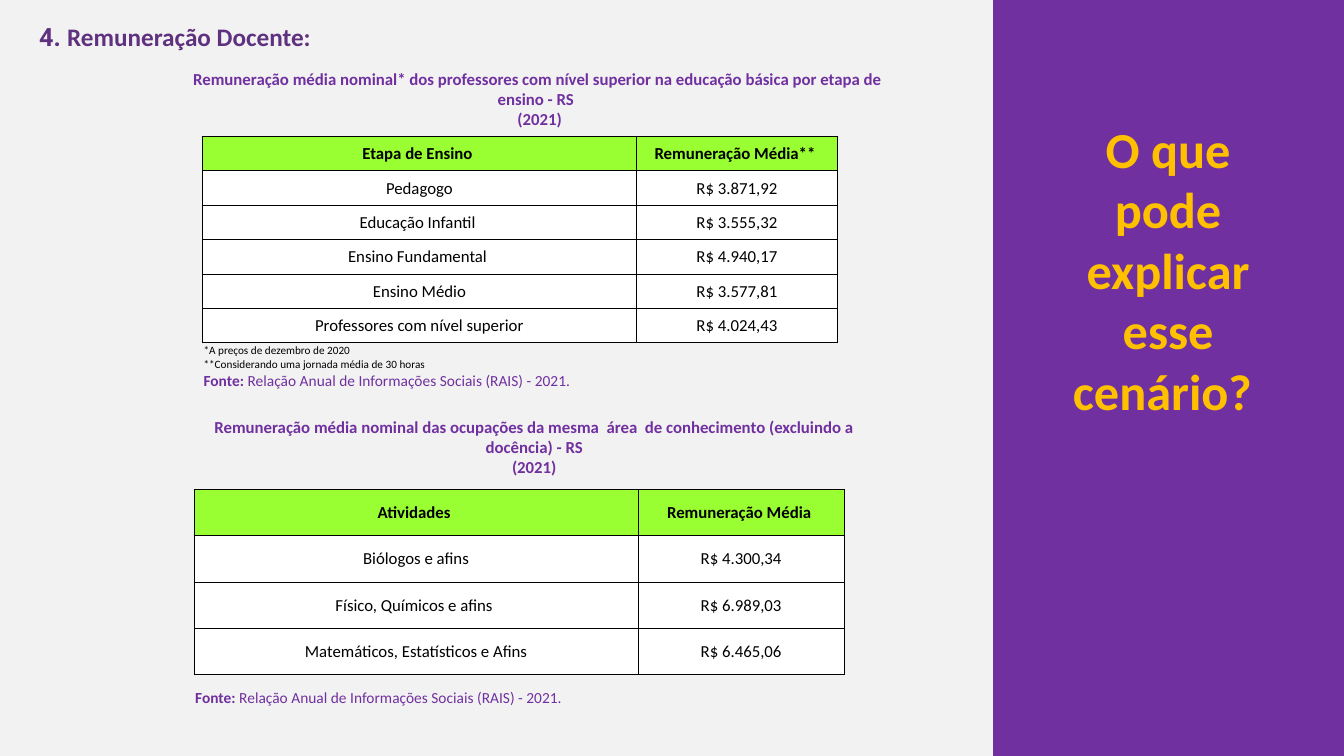
from lxml.etree import SubElement
from pptx import Presentation
from pptx.dml.color import RGBColor
from pptx.enum.shapes import MSO_SHAPE
from pptx.enum.text import MSO_ANCHOR, PP_ALIGN
from pptx.oxml.ns import qn
from pptx.util import Pt

PURPLE, BLACK, WHITE, GREEN = "7030A0", "000000", "FFFFFF", "99FF33"
TITLE_PURPLE, GOLD, PALE_GREY = "5F317F", "FFC000", "F2F2F2"
CENTER, LEFT = PP_ALIGN.CENTER, PP_ALIGN.LEFT

SOURCE = [("Fonte: ", 11, PURPLE, True),
          ("Relação Anual de Informações Sociais (RAIS) - 2021.", 11, PURPLE, False)]

TEXTS = [
    {"box": (20.9, 11.5, 479.5, 51), "align": LEFT, "paragraphs": [
        [("4. ", 18, TITLE_PURPLE, True, "Roboto"),
         ("Remuneração Docente: ", 18, TITLE_PURPLE, True)]]},
    {"box": (743, 80.6, 182.9, 225.4), "align": CENTER, "paragraphs": [
        [("O que pode explicar esse cenário? ", 36, GOLD, True)]]},
    {"box": (119.5, 45.4, 529.2, 51), "align": CENTER, "paragraphs": [
        [("Remuneração média nominal* dos professores com nível superior "
          "na educação básica por etapa de ensino - RS ", 12, PURPLE, True)],
        [(" (2021)", 12, PURPLE, True)]]},
    {"box": (139, 293.8, 485.3, 51), "align": CENTER, "paragraphs": [
        [("Remuneração média nominal das ocupações da mesma  área  de "
          "conhecimento (excluindo a docência) - RS", 12, PURPLE, True)],
        [(" (2021) ", 12, PURPLE, True)]]},
]

TABLES = [
    {"corner": (144.7, 97.3), "columns": (309.8, 143.8), "row": 24.6, "footer_row": 33.2,
     "rows": [("Etapa de Ensino ", "Remuneração Média** "),
              ("Pedagogo", "R$ 3.871,92"),
              ("Educação Infantil ", "R$ 3.555,32"),
              ("Ensino Fundamental ", "R$ 4.940,17"),
              ("Ensino Médio", "R$ 3.577,81"),
              ("Professores com nível superior", "R$ 4.024,43")],
     "footer": [[("*A preços de dezembro de 2020", 8, BLACK, False)],
                [("**Considerando uma jornada média de 30 horas", 8, BLACK, False)],
                SOURCE]},
    {"corner": (138.7, 349.6), "columns": (317, 147.4), "row": 33, "footer_row": 33,
     "rows": [("Atividades ", "Remuneração Média "),
              ("Biólogos e afins", "R$ 4.300,34"),
              ("Físico, Químicos e afins ", "R$ 6.989,03"),
              ("Matemáticos, Estatísticos e Afins", "R$ 6.465,06")],
     "footer": [SOURCE]},
]


def color(value):
    return RGBColor.from_string(value)


def write(frame, paragraphs, align):
    for index, runs in enumerate(paragraphs):
        paragraph = frame.paragraphs[0] if index == 0 else frame.add_paragraph()
        paragraph.alignment = align
        for text, size, ink, bold, *face in runs:
            run = paragraph.add_run()
            run.text = text
            run.font.size = Pt(size)
            run.font.bold = bold
            run.font.name = face[0] if face else "Calibri"
            run.font.color.rgb = color(ink)


def set_borders(cell, visible):
    properties = cell._tc.get_or_add_tcPr()
    for side in "LRTB":
        line = SubElement(properties, qn(f"a:ln{side}"), w=str(Pt(0.5)))
        if side in visible:
            fill = SubElement(line, qn("a:solidFill"))
            SubElement(fill, qn("a:srgbClr"), val=BLACK)
        else:
            SubElement(line, qn("a:noFill"))


def set_cell(cell, borders, fill):
    set_borders(cell, borders)
    cell.vertical_anchor = MSO_ANCHOR.MIDDLE
    cell.margin_left = cell.margin_right = cell.margin_top = Pt(0.7)
    cell.margin_bottom = Pt(0)
    if fill:
        cell.fill.solid()
        cell.fill.fore_color.rgb = color(fill)
    else:
        cell.fill.background()


def add_pay_table(slide, content):
    rows, columns = content["rows"], content["columns"]
    heights = [content["row"]] * len(rows) + [content["footer_row"]]
    left, top = content["corner"]
    table = slide.shapes.add_table(len(heights), len(columns), Pt(left), Pt(top),
                                   Pt(sum(columns)), Pt(sum(heights))).table
    table.first_row = table.horz_banding = False
    for column, width in zip(table.columns, columns):
        column.width = Pt(width)
    for row, height in zip(table.rows, heights):
        row.height = Pt(height)
    for r, values in enumerate(rows):
        for c, value in enumerate(values):
            cell = table.cell(r, c)
            set_cell(cell, "LRTB", WHITE if r else GREEN)
            write(cell.text_frame, [[(value, 12, BLACK, r == 0)]], CENTER)
    last = len(rows)
    for c in range(len(columns)):
        set_cell(table.cell(last, c), "T", None)
    footer = table.cell(last, 0)
    footer.merge(table.cell(last, len(columns) - 1))
    write(footer.text_frame, content["footer"], LEFT)


def main():
    deck = Presentation()
    deck.slide_width, deck.slide_height = Pt(960), Pt(540)
    slide = deck.slides.add_slide(deck.slide_layouts[6])
    slide.background.fill.solid()
    slide.background.fill.fore_color.rgb = color(PALE_GREY)

    panel = slide.shapes.add_shape(MSO_SHAPE.RECTANGLE, Pt(709.9), Pt(0), Pt(250.1), Pt(540))
    panel.shadow.inherit = False
    panel.fill.solid()
    panel.fill.fore_color.rgb = color(PURPLE)
    panel.line.color.rgb = color(PURPLE)
    panel.line.width = Pt(1)

    for content in TABLES:
        add_pay_table(slide, content)
    for content in TEXTS:
        frame = slide.shapes.add_textbox(*map(Pt, content["box"])).text_frame
        frame.word_wrap = True
        write(frame, content["paragraphs"], content["align"])
    deck.save("out.pptx")


if __name__ == "__main__":
    main()
